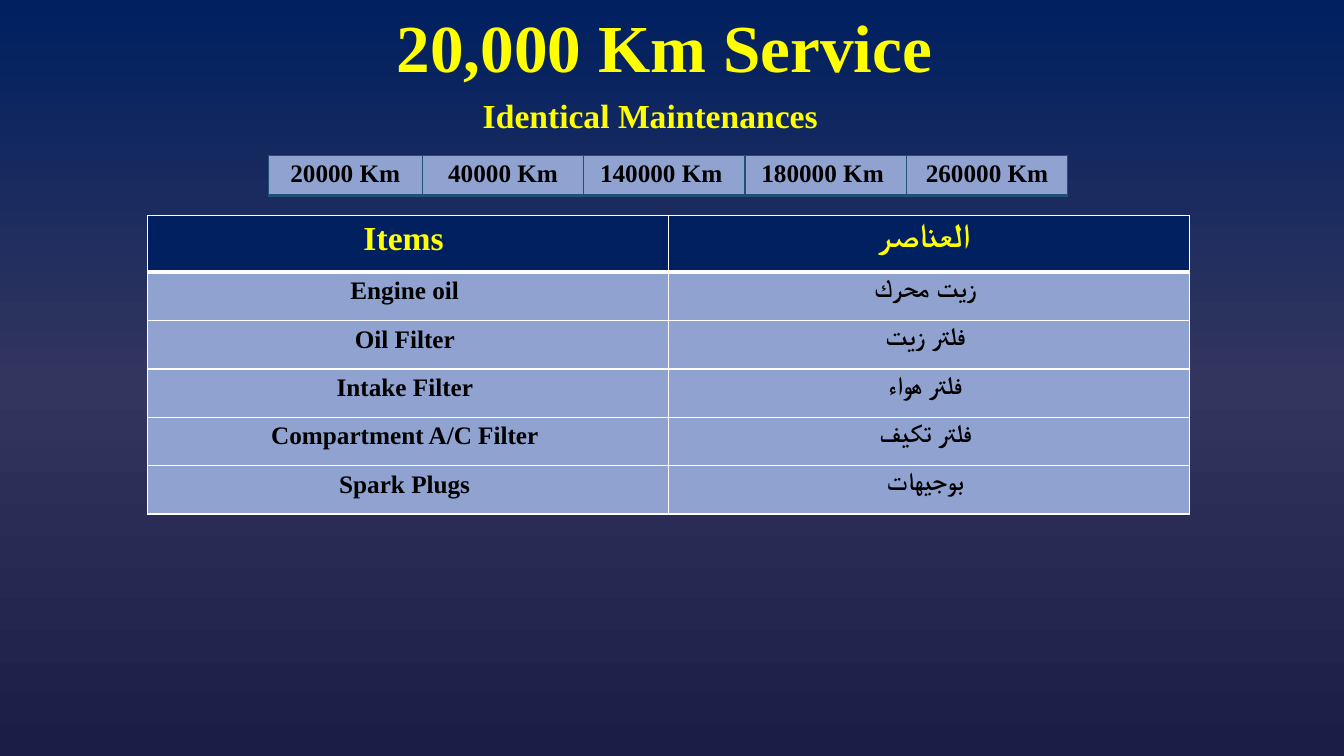
from copy import deepcopy

from lxml.etree import SubElement
from pptx import Presentation
from pptx.dml.color import RGBColor
from pptx.enum.text import MSO_ANCHOR, PP_ALIGN
from pptx.oxml.ns import qn
from pptx.util import Inches, Pt

NAVY = RGBColor(0x00, 0x20, 0x60)
SLATE = RGBColor(0x32, 0x35, 0x5E)
INDIGO = RGBColor(0x1A, 0x1E, 0x47)
YELLOW = RGBColor(0xFF, 0xFF, 0x00)
BLACK = RGBColor(0x00, 0x00, 0x00)
WHITE = RGBColor(0xFF, 0xFF, 0xFF)
PERIWINKLE = RGBColor(0x90, 0xA2, 0xCF)
STEEL = RGBColor(0x22, 0x4F, 0x76)

INTERVALS = ["20000 Km", "40000 Km", "140000 Km ", "180000 Km ", "260000 Km"]
ITEMS = [
    ("Items ", "العناصر "),
    ("Engine oil ", "زيت محرك "),
    ("Oil Filter ", "فلتر زيت "),
    ("Intake Filter ", "فلتر هواء "),
    ("Compartment A/C Filter ", "فلتر تكيف "),
    ("Spark Plugs ", "بوجيهات "),
]


class ServiceSlide:
    font = "Times New Roman"

    def __init__(self, prs):
        self.s = prs.slides.add_slide(prs.slide_layouts[6])

    def background(self, colors):
        fill = self.s.background.fill
        fill.gradient()
        fill.gradient_angle = 270
        stop_list = next(self.s.element.iter(qn("a:gsLst")))
        stop_list.insert(1, deepcopy(stop_list[0]))
        for i, (stop, color) in enumerate(zip(fill.gradient_stops, colors)):
            stop.color.rgb = color
            stop.position = i / (len(colors) - 1)

    def paragraph(self, tf, text, size, color):
        p = tf.paragraphs[0]
        p.text = text
        p.alignment = PP_ALIGN.CENTER
        p.font.name = self.font
        p.font.size = Pt(size)
        p.font.bold = True
        p.font.color.rgb = color
        return p

    def text(self, text, left, top, width, height, size):
        box = self.s.shapes.add_textbox(
            Inches(left), Inches(top), Inches(width), Inches(height))
        tf = box.text_frame
        tf.word_wrap = True
        tf.vertical_anchor = MSO_ANCHOR.MIDDLE
        return self.paragraph(tf, text, size, YELLOW)

    def borders(self, cell, color, bottom=1):
        props = cell._tc.get_or_add_tcPr()
        widths = {"a:lnL": 1, "a:lnR": 1, "a:lnT": 1, "a:lnB": bottom}
        for i, (tag, width) in enumerate(widths.items()):
            line = SubElement(props, qn(tag), w=str(Pt(width)))
            solid = SubElement(line, qn("a:solidFill"))
            SubElement(solid, qn("a:srgbClr"), val=str(color))
            props.insert(i, line)

    def table(self, left, top, widths, heights):
        table = self.s.shapes.add_table(
            len(heights), len(widths), Inches(left), Inches(top),
            Inches(sum(widths)), Inches(sum(heights))).table
        table.first_row = table.horz_banding = False
        for column, width in zip(table.columns, widths):
            column.width = Inches(width)
        for row, height in zip(table.rows, heights):
            row.height = Inches(height)
        return table

    def cell(self, cell, text, size, color, fill, border, bottom=1):
        cell.fill.solid()
        cell.fill.fore_color.rgb = fill
        self.paragraph(cell.text_frame, text, size, color)
        self.borders(cell, border, bottom)


def main():
    prs = Presentation()
    prs.slide_width, prs.slide_height = Inches(13.33), Inches(7.5)
    slide = ServiceSlide(prs)
    slide.background([NAVY, SLATE, INDIGO])

    title = slide.text("20,000 Km Service", 0.84, 0.1, 11.5, 0.8, 48)
    title.line_spacing = 0.9

    intervals = slide.table(2.66, 1.54, [1.53] + [1.6] * 4, [0.39])
    for cell, text in zip(intervals.iter_cells(), INTERVALS):
        slide.cell(cell, text, 18, BLACK, PERIWINKLE, STEEL, 2)

    slide.text("Identical Maintenances", 3.72, 0.89, 5.46, 0.5, 24)

    items = slide.table(1.46, 2.14, [5.17] * 2, [0.56] + [0.48] * 5)
    for i, row in enumerate(ITEMS):
        style = (18, BLACK, PERIWINKLE, WHITE) if i else (24, YELLOW, NAVY, WHITE, 3)
        for j, text in enumerate(row):
            slide.cell(items.cell(i, j), text, *style)

    prs.save("out.pptx")


if __name__ == "__main__":
    main()
